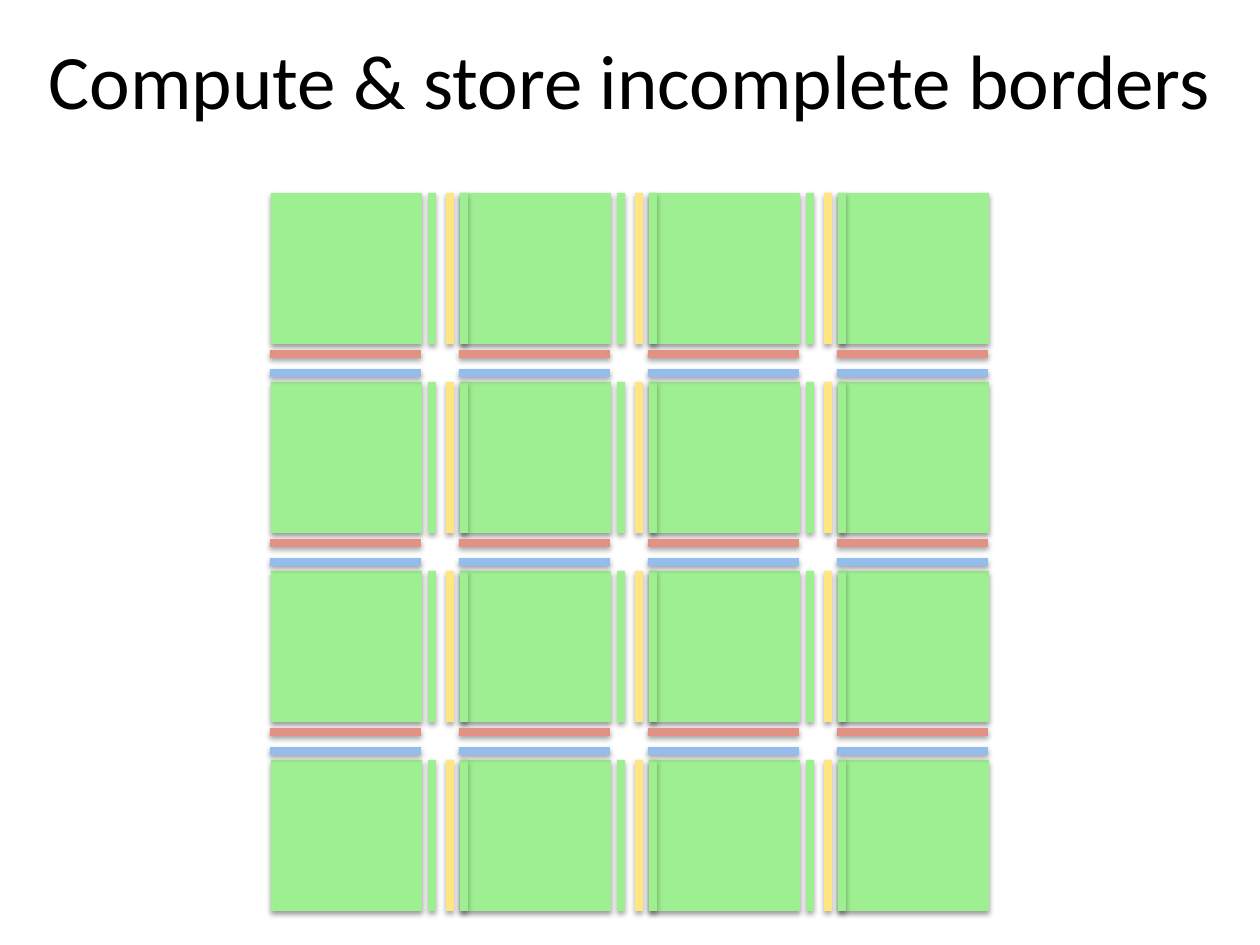
"""Build a slide of a 4 by 4 grid of tiles with their incomplete borders."""
from itertools import product

from pptx import Presentation
from pptx.dml.color import RGBColor
from pptx.enum.shapes import MSO_SHAPE as Shape
from pptx.enum.text import MSO_ANCHOR as Anchor, PP_ALIGN as Align
from pptx.oxml import parse_xml
from pptx.oxml.ns import nsdecls, qn
from pptx.util import Pt

SCALE = 914400 / 126
COUNT, PITCH, TILE, BAR = 4, 189, 151, 8
GREEN, YELLOW, RED, BLUE = "9EEF91", "FFE680", "E39085", "94BCEC"


def px(*lengths):
    return [round(length * SCALE) for length in lengths]


def color(value):
    return RGBColor.from_string(value)


deck = Presentation()
deck.slide_width, deck.slide_height = px(1260, 945)
page = deck.slides.add_slide(deck.slide_layouts[5])

title = page.shapes.title
title.left, title.top, title.width, title.height = px(0, 0, 1260, 158)
title.text_frame.vertical_anchor = Anchor.MIDDLE
para = title.text_frame.paragraphs[0]
para.alignment = Align.CENTER
span = para.add_run()
span.text = "Compute & store incomplete borders"
title_format = {"name": "Calibri", "size": Pt(44)}
for name, value in title_format.items():
    setattr(span.font, name, value)
span.font.color.rgb = color("000000")

tiles = (271, 193, TILE, TILE, COUNT, COUNT, GREEN, 38, 1.6)
left_edges = (460, 193, BAR, TILE, COUNT - 1, COUNT, GREEN, 35, 1.8)
right_borders = (428, 193, BAR, TILE, COUNT - 1, COUNT, GREEN, 35, 1.8)
left_borders = (446, 193, BAR, TILE, COUNT - 1, COUNT, YELLOW, 35, 1.8)
bottom_borders = (270, 350, TILE, BAR, COUNT, COUNT - 1, RED, 35, 1.8)
top_borders = (270, 369, TILE, BAR, COUNT, COUNT - 1, BLUE, 35, 1.8)
layers = [tiles, left_edges, right_borders, left_borders, bottom_borders, top_borders]

for left, top, width, height, columns, rows, fill, opacity, distance in layers:
    group = page.shapes.add_group_shape()
    for column, row in product(range(columns), range(rows)):
        place = px(left + column * PITCH, top + row * PITCH, width, height)
        box = group.shapes.add_shape(Shape.RECTANGLE, *place)
        box.fill.solid()
        box.fill.fore_color.rgb = color(fill)
        box.line.fill.background()
        box.shadow.inherit = False
        effects = box._element.spPr.find(qn("a:effectLst"))
        effects.append(parse_xml(
            f'<a:outerShdw {nsdecls("a")} blurRad="{Pt(3.1)}" dist="{Pt(distance)}" '
            f'dir="5400000" rotWithShape="0"><a:srgbClr val="000000">'
            f'<a:alpha val="{opacity * 1000}"/></a:srgbClr></a:outerShdw>'
        ))

deck.save("out.pptx")
